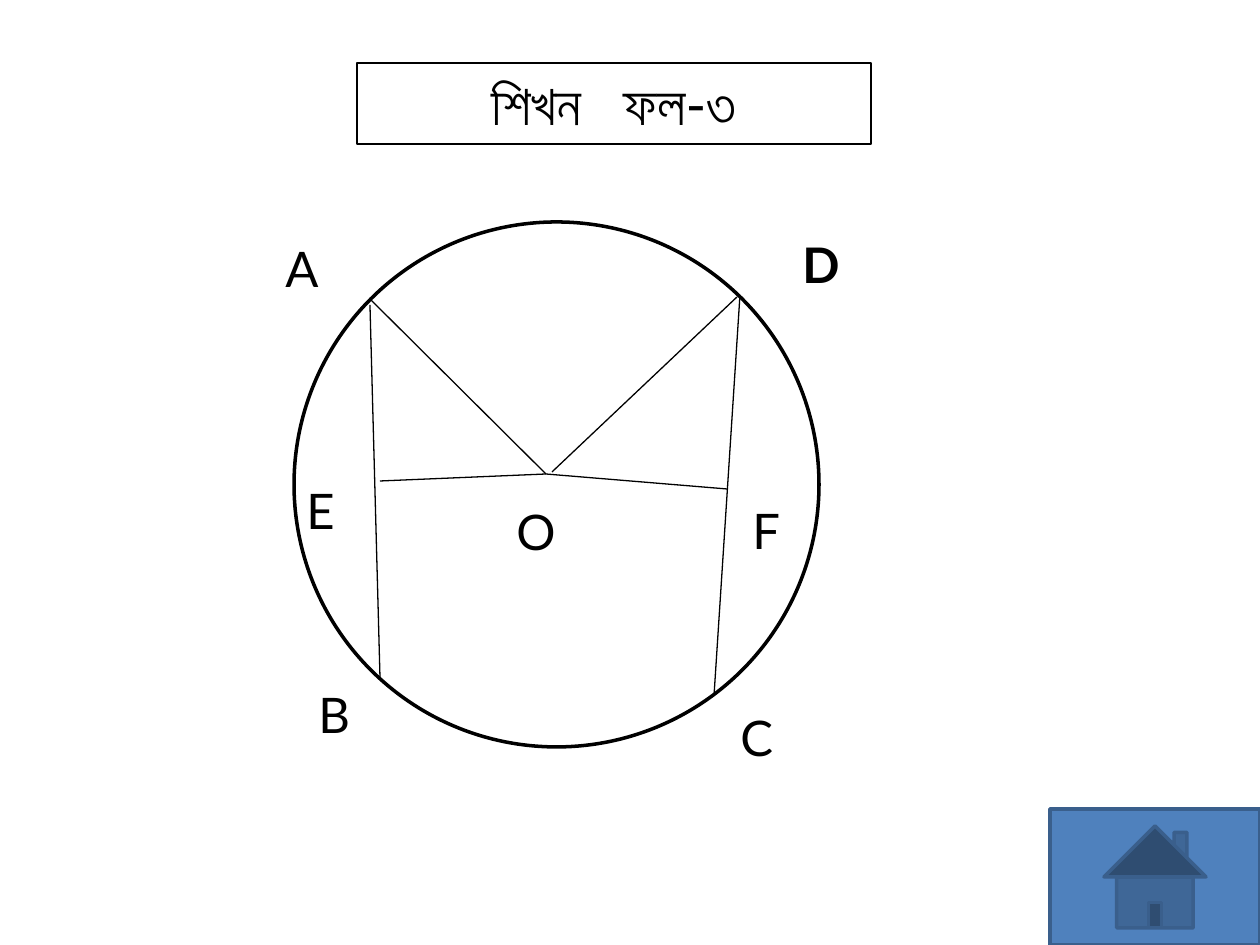
from lxml.etree import SubElement
from pptx import Presentation
from pptx.dml.color import RGBColor
from pptx.enum.shapes import MSO_CONNECTOR, MSO_SHAPE
from pptx.enum.text import MSO_ANCHOR, MSO_AUTO_SIZE, PP_ALIGN
from pptx.oxml.ns import qn
from pptx.util import Emu, Pt

PX = 914400 / 126
SLIDE_WIDTH, SLIDE_HEIGHT = 1260, 945
TITLE_ONLY = 5

BLACK = RGBColor(0x00, 0x00, 0x00)
BLUE = RGBColor(0x4F, 0x81, 0xBD)
DARK_BLUE = RGBColor(0x3A, 0x5F, 0x8C)


def px(*lengths):
    return [Emu(round(length * PX)) for length in lengths]


def write_text(paragraph, text, size=28, bold=False, color=BLACK, font="Lato", spacing=0):
    run = paragraph.add_run()
    run.text = text
    run.font.name = font
    run.font.size = Pt(size)
    run.font.bold = bold
    run.font.color.rgb = color
    if spacing:
        run.font._element.set("spc", str(spacing * 100))


class Board:
    """Draws on one slide in a shared style; figure parts go in a group."""

    thin, thick = 0.75, 2
    label_height = 72

    def __init__(self, slide):
        self.slide = slide
        self.figure = slide.shapes.add_group_shape().shapes

    def outline(self, shape, color, width):
        shape.line.color.rgb = color
        shape.line.width = Pt(width)

    def title(self, words, box, gap):
        title = self.slide.shapes.title
        title.left, title.top, title.width, title.height = px(*box)
        self.outline(title, BLACK, self.thin)
        frame = title.text_frame
        frame.word_wrap = True
        frame.auto_size = MSO_AUTO_SIZE.NONE
        frame.vertical_anchor = MSO_ANCHOR.TOP
        paragraph = frame.paragraphs[0]
        paragraph.alignment = PP_ALIGN.CENTER
        for index, word in enumerate(words):
            if index:
                write_text(paragraph, " ", size=32, spacing=gap)
            write_text(paragraph, word, size=32)

    def shape(self, shapes, kind, box, line, fill=None):
        shape = shapes.add_shape(kind, *px(*box))
        shape.shadow.inherit = False
        if fill is None:
            shape.fill.background()
        else:
            shape.fill.solid()
            shape.fill.fore_color.rgb = fill
        self.outline(shape, line, self.thick)

    def segment(self, start, end):
        line = self.figure.add_connector(MSO_CONNECTOR.STRAIGHT, *px(*start, *end))
        self.outline(line, BLACK, self.thin)
        SubElement(line._element.spPr, qn("a:effectLst"))

    def label(self, text, left, top, width=105, bold=False):
        box = self.figure.add_textbox(*px(left, top, width, self.label_height))
        frame = box.text_frame
        frame.word_wrap = True
        frame.auto_size = MSO_AUTO_SIZE.SHAPE_TO_FIT_TEXT
        write_text(frame.paragraphs[0], text, bold=bold)


def main():
    presentation = Presentation()
    presentation.slide_width, presentation.slide_height = px(SLIDE_WIDTH, SLIDE_HEIGHT)
    slide = presentation.slides.add_slide(presentation.slide_layouts[TITLE_ONLY])
    board = Board(slide)

    # Title
    board.title(["শিখন", "ফল-৩"], (357, 63, 514, 81), gap=16)

    # Circle
    board.shape(board.figure, MSO_SHAPE.OVAL, (294, 222, 525, 525), BLACK)

    # Chords AB and DC
    board.segment((370, 305), (380, 677))
    board.segment((740, 295), (714, 696))

    # Radii OA and OD, perpendiculars OE and OF
    center = (546, 474)
    board.segment(center, (370, 299))
    board.segment((552, 472), (737, 297))
    board.segment(center, (380, 481))
    board.segment(center, (727, 489))

    # Point names
    board.label("A", 273, 232, width=147)
    board.label("B", 306, 678, width=147)
    board.label("C", 728, 701)
    board.label("D", 790, 228, bold=True)
    board.label("E", 294, 474)
    board.label("F", 740, 494)
    board.label("O", 504, 495)

    # Home button in the bottom right corner
    width, height = 210, 136
    board.shape(slide.shapes, MSO_SHAPE.ACTION_BUTTON_HOME,
                (SLIDE_WIDTH - width, SLIDE_HEIGHT - height, width, height),
                DARK_BLUE, fill=BLUE)

    presentation.save("out.pptx")


if __name__ == "__main__":
    main()
